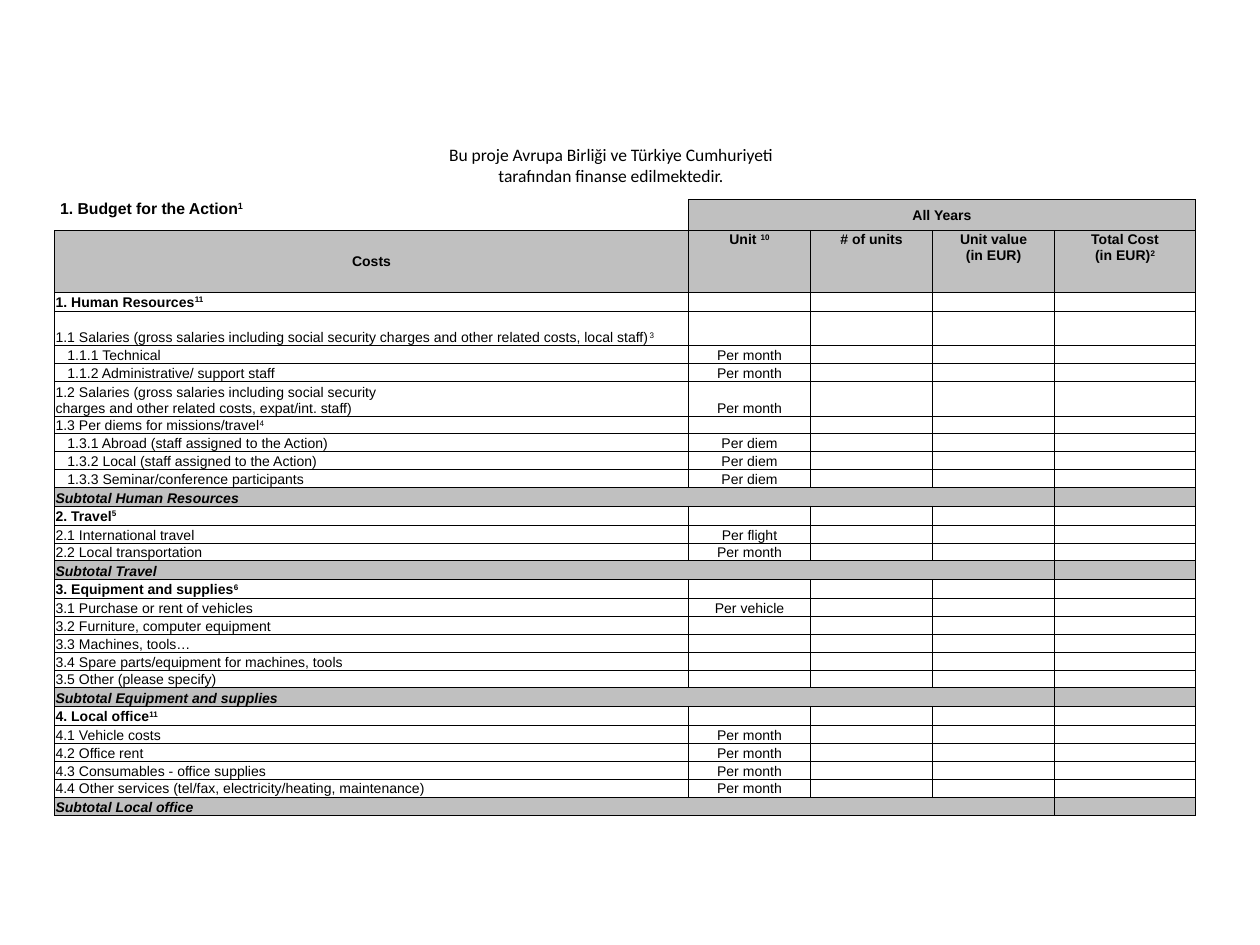
from lxml import etree
from pptx import Presentation
from pptx.dml.color import RGBColor
from pptx.enum import text
from pptx.oxml import ns
from pptx.util import Cm, Pt

# Content: "^" starts a superscript note, "\n" breaks a line
FUNDING = ("Bu proje Avrupa Birliği ve Türkiye Cumhuriyeti "
           "tarafından finanse edilmektedir.")
TITLE, PERIOD = "1. Budget for the Action^1", "All Years"
HEADINGS = ["Costs", "Unit ^10", "# of units", "Unit value\n(in EUR)",
            "Total Cost\n(in EUR)^2"]
SECTIONS = [
    ("1. Human Resources^11", [
        ("1.1 Salaries (gross salaries including social security charges "
         "and other related costs, local staff)^3", ""),
        ("1.1.1 Technical", "Per month"),
        ("1.1.2 Administrative/ support staff", "Per month"),
        ("1.2 Salaries (gross salaries including social security\n"
         "charges and other related costs, expat/int. staff)", "Per month"),
        ("1.3 Per diems for missions/travel^4", ""),
        ("1.3.1 Abroad (staff assigned to the Action)", "Per diem"),
        ("1.3.2 Local (staff assigned to the Action)", "Per diem"),
        ("1.3.3 Seminar/conference participants", "Per diem"),
    ], "Subtotal Human Resources"),
    ("2. Travel^5", [
        ("2.1 International travel", "Per flight"),
        ("2.2 Local transportation", "Per month"),
    ], "Subtotal Travel"),
    ("3. Equipment and supplies^6", [
        ("3.1 Purchase or rent of vehicles", "Per vehicle"),
        ("3.2 Furniture, computer equipment", ""),
        ("3.3 Machines, tools…", ""),
        ("3.4 Spare parts/equipment for machines, tools", ""),
        ("3.5 Other (please specify)", ""),
    ], "Subtotal Equipment and supplies"),
    ("4. Local office^11", [
        ("4.1 Vehicle costs", "Per month"),
        ("4.2 Office rent", "Per month"),
        ("4.3 Consumables - office supplies", "Per month"),
        ("4.4 Other services (tel/fax, electricity/heating, maintenance)",
         "Per month"),
    ], "Subtotal Local office"),
]

# Layout in cm
LEFT, TOP = 1.1, 4.02
WIDTHS = [12.78, 2.46, 2.46, 2.46, 2.84]
HEIGHTS = {"title": 0.63, "head": 1.24, "section": 0.38, "item": 0.36,
           "subtotal": 0.38}
TALL = {"1.1": 0.7, "1.2": 0.68}
INSET, TITLE_INDENT, ITEM_INDENT = 0.02, 0.11, 0.26
GREY, BLACK = "C0C0C0", "000000"
LAST = len(WIDTHS) - 1
CENTER = text.PP_ALIGN.CENTER
ANCHOR = text.MSO_ANCHOR


def color(value):
    return RGBColor.from_string(value)


def write(para, words, **fmt):
    """Fill a paragraph, raising what follows "^"."""
    if not words:
        end = etree.SubElement(para._p, ns.qn("a:endParaRPr"))
        end.set("sz", "800")
        return
    values = {"name": "Arial", "size": Pt(8), "bold": False,
              "italic": False} | fmt
    body, _, note = words.partition("^")
    pieces = [(line, False) for line in body.split("\n")]
    if note:
        pieces.append((note, True))
    for index, (piece, raised) in enumerate(pieces):
        if index and not raised:
            para.add_line_break()
        span = para.add_run()
        span.text = piece
        for key, value in values.items():
            setattr(span.font, key, value)
        span.font.color.rgb = color(BLACK)
        if raised:
            span._r.get_or_add_rPr().set("baseline", "30000")


def draw_borders(cell, widths):
    """Set left, right, top and bottom lines in points; 0 means none."""
    props = cell._tc.get_or_add_tcPr()
    for side, width in zip("LRTB", widths):
        line = etree.SubElement(props, ns.qn("a:ln" + side))
        line.set("w", str(Pt(width)))
        if width:
            fill = etree.SubElement(line, ns.qn("a:solidFill"))
            etree.SubElement(fill, ns.qn("a:srgbClr")).set("val", BLACK)
        else:
            etree.SubElement(line, ns.qn("a:noFill"))


def border_widths(kind, column):
    if kind == "title" and column == 0:
        return 0, 0.5, 0, 0.5
    left = right = 0.5
    if kind == "subtotal":
        left = 0 if 0 < column < LAST else left
        right = 0 if column < LAST - 1 else right
    return left, right, 0.5, 0.5


def cell_anchor(kind, column):
    if kind == "head":
        return ANCHOR.TOP if column else ANCHOR.MIDDLE
    if kind == "title":
        return ANCHOR.MIDDLE if column else ANCHOR.TOP
    return ANCHOR.MIDDLE if kind == "section" else ANCHOR.BOTTOM


def left_inset(kind, words):
    if words == TITLE:
        return TITLE_INDENT
    nested = kind == "item" and words.split(" ")[0].count(".") == 2
    return ITEM_INDENT if nested else INSET


# Table rows: kind and leading cells
rows = [("title", [TITLE, PERIOD]), ("head", HEADINGS)]
for heading, items, subtotal in SECTIONS:
    rows.append(("section", [heading]))
    rows += [("item", list(item)) for item in items]
    rows.append(("subtotal", [subtotal]))
heights = [TALL.get(cells[0].split(" ")[0], HEIGHTS[kind])
           if kind == "item" else HEIGHTS[kind] for kind, cells in rows]

deck = Presentation()
deck.slide_width, deck.slide_height = Cm(25.4), Cm(19.05)
page = deck.slides.add_slide(deck.slide_layouts[6])

# Funding line
box = page.shapes.add_textbox(Cm(8.62), Cm(2.77), Cm(7.39), Cm(0.79))
box.text_frame.word_wrap = True
para = box.text_frame.paragraphs[0]
para.alignment = CENTER
write(para, FUNDING, name="Calibri", size=Pt(10))

# Budget table
table = page.shapes.add_table(len(rows), len(WIDTHS), Cm(LEFT), Cm(TOP),
                              Cm(sum(WIDTHS)), Cm(sum(heights))).table
table.first_row = table.horz_banding = False
for column, width in zip(table.columns, WIDTHS):
    column.width = Cm(width)
for r, (kind, cells) in enumerate(rows):
    table.rows[r].height = Cm(heights[r])
    for c in range(len(WIDTHS)):
        words = cells[c] if c < len(cells) else ""
        cell = table.cell(r, c)
        layout = {"margin_left": Cm(left_inset(kind, words)),
                  "margin_right": Cm(INSET), "margin_top": Cm(INSET),
                  "margin_bottom": 0, "vertical_anchor": cell_anchor(kind, c)}
        for key, value in layout.items():
            setattr(cell, key, value)
        draw_borders(cell, border_widths(kind, c))
        if kind in ("head", "subtotal") or (kind == "title" and c):
            cell.fill.solid()
            cell.fill.fore_color.rgb = color(GREY)
        else:
            cell.fill.background()
        para = cell.text_frame.paragraphs[0]
        if c or kind == "head":
            para.alignment = CENTER
        write(para, words, size=Pt(9 if words == TITLE else 8),
              bold=kind != "item", italic=kind == "subtotal")
table.cell(0, 1).merge(table.cell(0, LAST))

deck.save("out.pptx")
